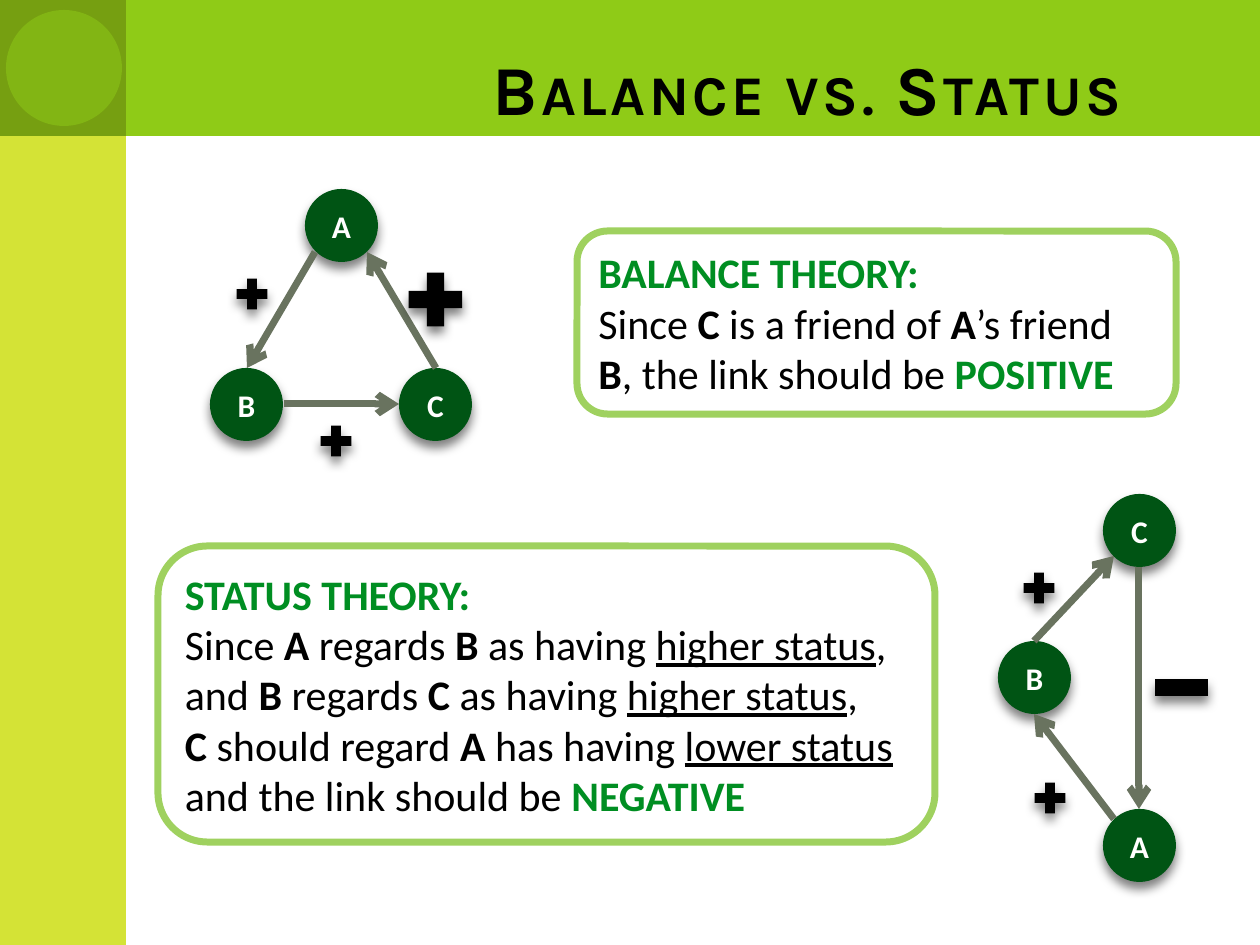
from dataclasses import dataclass
from lxml import etree
from pptx import Presentation
from pptx.dml.color import RGBColor
from pptx.enum.shapes import MSO_CONNECTOR, MSO_SHAPE
from pptx.enum.text import MSO_ANCHOR, MSO_AUTO_SIZE, PP_ALIGN
from pptx.oxml import parse_xml
from pptx.oxml.ns import qn
from pptx.util import Emu, Pt

RECT, OVAL, ROUND = MSO_SHAPE.RECTANGLE, MSO_SHAPE.OVAL, MSO_SHAPE.ROUNDED_RECTANGLE
PLUS, MINUS = MSO_SHAPE.MATH_PLUS, MSO_SHAPE.MATH_MINUS
STRAIGHT = MSO_CONNECTOR.STRAIGHT
MIDDLE, BOTTOM = MSO_ANCHOR.MIDDLE, MSO_ANCHOR.BOTTOM
LEFT, CENTER, RIGHT = PP_ALIGN.LEFT, PP_ALIGN.CENTER, PP_ALIGN.RIGHT
NO_FIT, GROW = MSO_AUTO_SIZE.NONE, MSO_AUTO_SIZE.SHAPE_TO_FIT_TEXT
SCALE = 914400 / 126
NODE, SIGN, BIG = 73, 42, 73
SHADOW = (
    '<a:effectLst xmlns:a="http://schemas.openxmlformats.org/drawingml/2006/main">'
    '<a:outerShdw blurRad="76200" dist="50800" dir="5400000" algn="t" rotWithShape="0">'
    '<a:srgbClr val="000000"><a:alpha val="50000"/></a:srgbClr></a:outerShdw></a:effectLst>'
)


@dataclass(frozen=True)
class Theme:
    band: str = "8FCB17"
    side: str = "D4E336"
    corner: str = "769F11"
    node: str = "005414"
    arrow: str = "69735F"
    frame: str = "9FD15F"
    key: str = "008E22"
    ink: str = "000000"
    paper: str = "FFFFFF"
    head: str = "Karla"
    body: str = "Calibri"
    title: int = 40
    text: int = 24
    label: int = 18
    stroke: int = 4


def px(num):
    return Emu(round(num * SCALE))


def apply(target, values):
    for name, value in values.items():
        setattr(target, name, value)


class Deck:
    def __init__(self, theme, width, height):
        self.theme = theme
        self.file = Presentation()
        apply(self.file, {"slide_width": px(width), "slide_height": px(height)})
        self.slide = self.file.slides.add_slide(self.file.slide_layouts[5])

    def shape(self, kind, box, fill, alpha=None, shadow=False):
        item = self.slide.shapes.add_shape(kind, *map(px, box))
        item.shadow.inherit = False
        item.fill.solid()
        item.fill.fore_color.rgb = RGBColor.from_string(fill)
        item.line.fill.background()
        if alpha:
            tone = item._element.spPr.find(qn("a:solidFill"))[0]
            etree.SubElement(tone, qn("a:alpha")).set("val", str(alpha * 1000))
        if shadow:
            props = item._element.spPr
            props.replace(props.find(qn("a:effectLst")), parse_xml(SHADOW))
        return item

    def run(self, line, text, size, color, face, bold=False, under=False):
        part = line.add_run()
        part.text = text
        apply(part.font, {"size": Pt(size), "name": face, "bold": bold, "underline": under})
        part.font.color.rgb = RGBColor.from_string(color)
        return part

    def title(self, text, box):
        look, item = self.theme, self.slide.shapes.title
        apply(item, dict(zip(("left", "top", "width", "height"), map(px, box))))
        apply(item.text_frame, {"vertical_anchor": BOTTOM, "auto_size": NO_FIT, "word_wrap": True})
        line = item.text_frame.paragraphs[0]
        apply(line, {"alignment": RIGHT, "line_spacing": Pt(36)})
        part = self.run(line, text, look.title, look.ink, look.head, True)
        for name, value in {"cap": "small", "spc": "200"}.items():
            part._r.get_or_add_rPr().set(name, value)
        self.slide.shapes._spTree.append(item._element)

    def node(self, name, left, top):
        look = self.theme
        item = self.shape(OVAL, (left, top, NODE, NODE), look.node, shadow=True)
        apply(item.text_frame, {"vertical_anchor": MIDDLE, "word_wrap": True})
        line = item.text_frame.paragraphs[0]
        line.alignment = CENTER
        self.run(line, name, look.label, look.paper, look.body, True)

    def arrow(self, start, end):
        item = self.slide.shapes.add_connector(STRAIGHT, *map(px, start + end))
        item.line.color.rgb = RGBColor.from_string(self.theme.arrow)
        item.line.width = Pt(self.theme.stroke)
        etree.SubElement(item.line._get_or_add_ln(), qn("a:tailEnd")).set("type", "arrow")
        etree.SubElement(item._element.spPr, qn("a:effectLst"))

    def sign(self, kind, left, top, size=SIGN):
        self.shape(kind, (left, top, size, size), self.theme.ink, shadow=True)

    def graph(self, nodes, links, signs):
        for node in nodes:
            self.node(*node)
        for link in links:
            self.arrow(*link)
        for sign in signs:
            self.sign(*sign)

    def panel(self, box, head, parts):
        look = self.theme
        item = self.shape(ROUND, box, look.paper)
        item.line.color.rgb = RGBColor.from_string(look.frame)
        item.line.width = Pt(look.stroke)
        frame = item.text_frame
        apply(frame, {"vertical_anchor": MIDDLE, "word_wrap": True, "auto_size": GROW})
        lines = frame.paragraphs[0], frame.add_paragraph()
        for line, group in zip(lines, ([("key", head)], parts)):
            line.alignment = LEFT
            for style, text in group:
                if style == "break":
                    line.add_line_break()
                    continue
                color = look.key if style == "key" else look.ink
                self.run(line, text, look.text, color, look.body,
                         style in ("key", "bold"), style == "under")


def main():
    look = Theme()
    deck = Deck(look, 1260, 945)
    deck.shape(RECT, (63, 0, 1197, 136), look.band)
    deck.shape(RECT, (0, 0, 126, 945), look.side)
    deck.shape(RECT, (0, 0, 126, 136), look.corner)
    deck.shape(OVAL, (6, 10, 116, 116), look.band, alpha=50)
    deck.title("Balance vs. Status", (189, -21, 1008, 157))

    deck.graph(
        [("A", 305, 189), ("B", 210, 368), ("C", 399, 368)],
        [((315, 252), (247, 368)), ((436, 368), (367, 252)), ((284, 404), (399, 404))],
        [(PLUS, 231, 273), (PLUS, 315, 420), (PLUS, 399, 263, BIG)],
    )
    deck.panel((577, 231, 599, 183), "BALANCE THEORY:", [
        ("", "Since "), ("bold", "C"), ("", " is a friend of "), ("bold", "A"),
        ("", "’s friend "), ("bold", "B"), ("", ", the link should be "), ("key", "POSITIVE"),
    ])
    deck.panel((158, 546, 777, 296), "STATUS THEORY:", [
        ("", "Since "), ("bold", "A "), ("", "regards "), ("bold", "B"),
        ("", " as having "), ("under", "higher status"), ("", ", "), ("break", ""),
        ("", "and "), ("bold", "B "), ("", "regards "), ("bold", "C"),
        ("", " as having "), ("under", "higher status"), ("", ", "), ("break", ""),
        ("bold", "C"), ("", " should regard "), ("bold", "A"),
        ("", " has having "), ("under", "lower status"), ("", " "), ("break", ""),
        ("", "and the link should be "), ("key", "NEGATIVE"),
    ])
    deck.graph(
        [("A", 1103, 809), ("B", 998, 641), ("C", 1103, 494)],
        [((1114, 819), (1034, 714)), ((1139, 567), (1139, 809)), ((1034, 641), (1114, 556))],
        [(PLUS, 1018, 567), (PLUS, 1029, 777), (MINUS, 1145, 651, BIG)],
    )
    deck.file.save("out.pptx")


if __name__ == "__main__":
    main()
